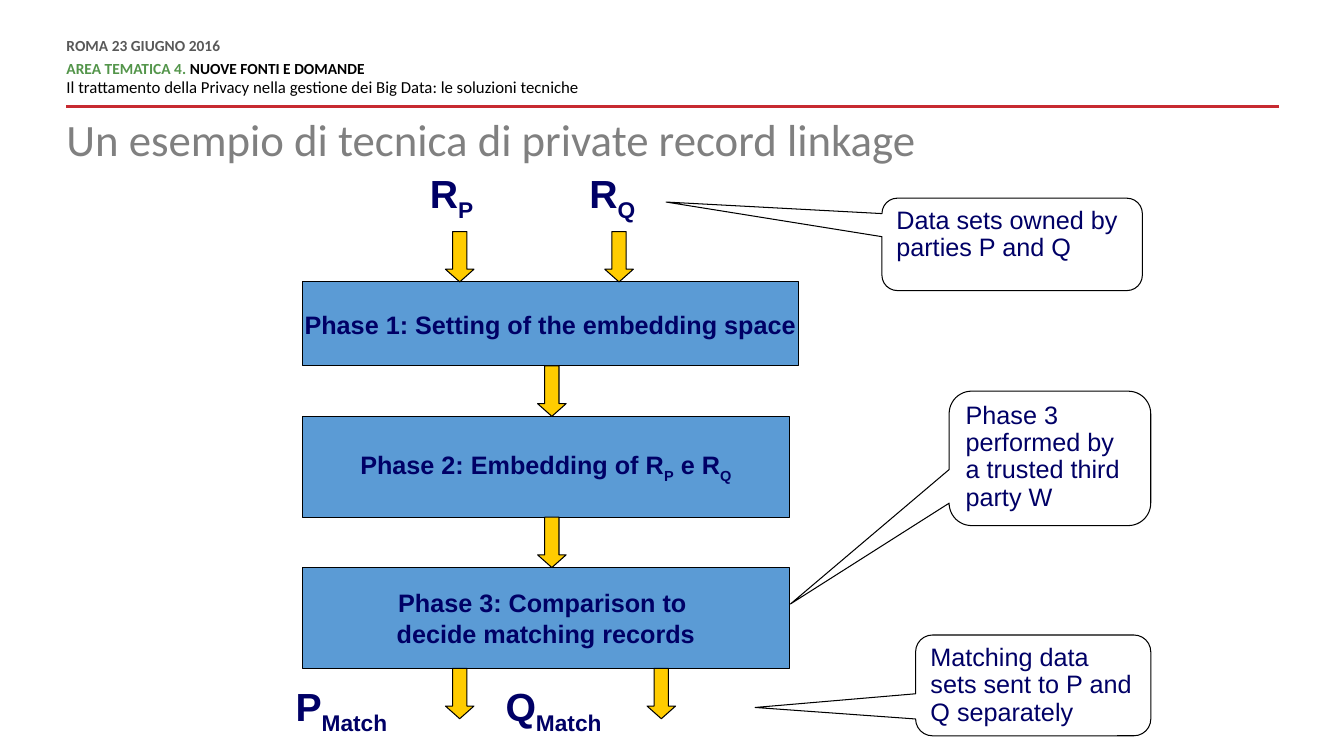
from lxml.etree import SubElement
from pptx import Presentation
from pptx.dml.color import RGBColor
from pptx.enum.shapes import MSO_CONNECTOR, MSO_SHAPE
from pptx.enum.text import MSO_ANCHOR, PP_ALIGN
from pptx.oxml.ns import qn
from pptx.util import Pt

NAVY, BLACK = "000066", "000000"


def color(value):
    return RGBColor.from_string(value)


def add_runs(paragraph, runs, size, font_name="Arial", bold=True):
    """Each run is a text, a color and whether it is a subscript."""
    for text, run_color, subscript in runs:
        run = paragraph.add_run()
        run.text = text
        run.font.size = Pt(size)
        run.font.name = font_name
        run.font.bold = bold
        run.font.color.rgb = color(run_color)
        if subscript:
            run.font._element.set("baseline", "-25000")


presentation = Presentation()
presentation.slide_width, presentation.slide_height = Pt(960), Pt(540)
slide = presentation.slides.add_slide(presentation.slide_layouts[6])
shapes = slide.shapes

# Header rule
rule = shapes.add_connector(MSO_CONNECTOR.STRAIGHT, Pt(913.7), Pt(76.3), Pt(47.5), Pt(76.3))
rule.line.color.rgb = color("C72A31")
rule.line.width = Pt(2)
SubElement(rule._element.spPr, qn("a:effectLst"))

# Header and title
header = shapes.add_textbox(Pt(47.5), Pt(28.1), Pt(600.5), Pt(42.5))
title = shapes.add_textbox(Pt(47.5), Pt(84.2), Pt(842.4), Pt(58.3))
for box in (header, title):
    frame = box.text_frame
    frame.word_wrap = True
    frame.margin_left = frame.margin_top = frame.margin_right = frame.margin_bottom = 0

header_lines = [
    ([("ROMA 23 GIUGNO 2016", "595959", False)], 11, True, 0, 6),
    ([("AREA TEMATICA 4. ", "53954A", False),
      ("NUOVE FONTI E DOMANDE", BLACK, False)], 11, True, 0, 0),
    ([("Il trattamento della Privacy nella gestione dei Big Data: le soluzioni tecniche",
       BLACK, False)], 12, False, 3, 6),
]
for index, (runs, size, bold, before, after) in enumerate(header_lines):
    frame = header.text_frame
    paragraph = frame.add_paragraph() if index else frame.paragraphs[0]
    paragraph.line_spacing = Pt(10.8)
    paragraph.space_before, paragraph.space_after = Pt(before), Pt(after)
    add_runs(paragraph, runs, size, "Calibri", bold)

paragraph = title.text_frame.paragraphs[0]
paragraph.line_spacing = 0.9
add_runs(paragraph, [("Un esempio di tecnica di private record linkage", "808080", False)],
         32, "Calibri", False)

# Phase boxes, stacked with room for one arrow between them
ARROW_HEIGHT = 36
phases = [
    (354.2, 60, [[("Phase 1: Setting of the embedding space", NAVY, False)]]),
    (347.8, 72, [[("Phase 2: Embedding of R", NAVY, False), ("P", NAVY, True),
                  (" e R", NAVY, False), ("Q", NAVY, True)]]),
    (347.8, 72, [[("Phase 3: Comparison to ", NAVY, False)],
                 [("decide matching records", NAVY, False)]]),
]
top = 201.4
arrow_tops = [top - ARROW_HEIGHT]
for width, height, lines in phases:
    phase = shapes.add_shape(MSO_SHAPE.RECTANGLE, Pt(216), Pt(top), Pt(width), Pt(height))
    phase.shadow.inherit = False
    phase.fill.solid()
    phase.fill.fore_color.rgb = color("5B9BD5")
    phase.line.color.rgb = color(BLACK)
    phase.line.width = Pt(0.75)
    frame = phase.text_frame
    frame.word_wrap = False
    frame.vertical_anchor = MSO_ANCHOR.MIDDLE
    for index, runs in enumerate(lines):
        paragraph = frame.add_paragraph() if index else frame.paragraphs[0]
        paragraph.alignment = PP_ALIGN.CENTER
        add_runs(paragraph, runs, 18)
    arrow_tops.append(top + height)
    top += height + ARROW_HEIGHT

# Flow arrows: two in, one between phases, two out
arrow_lefts = [(318.2, 432), (384,), (384,), (318.2, 462.2)]
for arrow_top, lefts in zip(arrow_tops, arrow_lefts):
    for left in lefts:
        arrow = shapes.add_shape(MSO_SHAPE.DOWN_ARROW, Pt(left), Pt(arrow_top),
                                 Pt(20.4), Pt(ARROW_HEIGHT))
        arrow.adjustments[0], arrow.adjustments[1] = 0.5, 0.444
        arrow.shadow.inherit = False
        arrow.fill.solid()
        arrow.fill.fore_color.rgb = color("FFCC00")
        arrow.line.color.rgb = color(BLACK)
        arrow.line.width = Pt(0.75)

# Input and output data sets
for name, subscript, left, label_top, width in [
    ("R", "P", 300, 117.4, 52),
    ("R", "Q", 414, 117.4, 52),
    ("P", "Match", 204, 484, 96),
    ("Q", "Match", 354, 484, 96),
]:
    label = shapes.add_textbox(Pt(left), Pt(label_top), Pt(width), Pt(41))
    label.text_frame.word_wrap = True
    add_runs(label.text_frame.paragraphs[0],
             [(name, NAVY, False), (subscript, NAVY, True)], 28)

# Callouts with their pointer tips
for text, left, callout_top, width, height, tip_x, tip_y in [
    ("Data sets owned by parties P and Q", 630, 141.6, 186, 66, -1.329, -0.458),
    ("Matching data sets sent to P and Q separately", 654, 453.6, 168, 72, -1.182, 0.219),
    ("Phase 3 performed by a trusted third party W", 678, 279.4, 144, 96, -1.287, 1.083),
]:
    callout = shapes.add_shape(MSO_SHAPE.ROUNDED_RECTANGULAR_CALLOUT, Pt(left),
                               Pt(callout_top), Pt(width), Pt(height))
    for index, adjustment in enumerate((tip_x, tip_y, 0.167)):
        callout.adjustments[index] = adjustment
    callout.shadow.inherit = False
    callout.fill.background()
    callout.line.color.rgb = color(BLACK)
    callout.line.width = Pt(0.75)
    frame = callout.text_frame
    frame.word_wrap = True
    frame.vertical_anchor = MSO_ANCHOR.TOP
    paragraph = frame.paragraphs[0]
    paragraph.alignment = PP_ALIGN.LEFT
    paragraph.line_spacing = 0.9
    add_runs(paragraph, [(text, NAVY, False)], 18, bold=False)

presentation.save("out.pptx")
